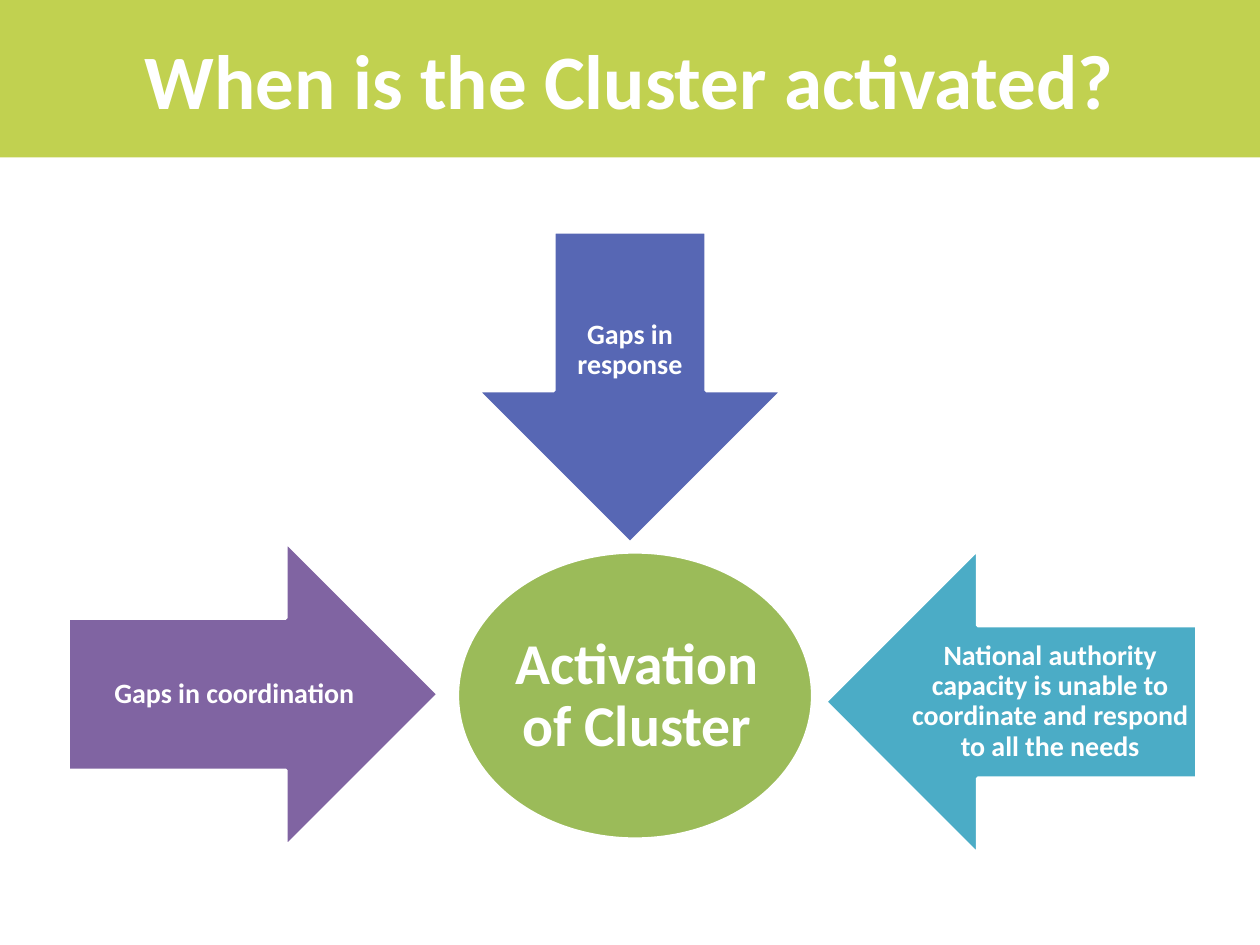
from pptx import Presentation
from pptx.dml.color import RGBColor
from pptx.enum.shapes import MSO_SHAPE
from pptx.enum.text import MSO_ANCHOR, PP_ALIGN
from pptx.util import Inches, Pt

ELLIPSE, RIGHT_ARROW = MSO_SHAPE.OVAL, MSO_SHAPE.RIGHT_ARROW
DOWN_ARROW, LEFT_ARROW = MSO_SHAPE.DOWN_ARROW, MSO_SHAPE.LEFT_ARROW
CENTER, RIGHT = PP_ALIGN.CENTER, PP_ALIGN.RIGHT
MIDDLE = MSO_ANCHOR.MIDDLE

WHITE = RGBColor(0xFF, 0xFF, 0xFF)
LIME = RGBColor(0xC1, 0xD1, 0x50)
GREEN = RGBColor(0x9B, 0xBB, 0x59)
PURPLE = RGBColor(0x80, 0x64, 0xA2)
BLUE = RGBColor(0x57, 0x67, 0xB4)
TEAL = RGBColor(0x4B, 0xAC, 0xC6)

# Grid of 100 columns by 75 rows
COLUMNS, ROWS = 100, 75
SLIDE_WIDTH, SLIDE_HEIGHT = Inches(10), Inches(7.5)
COLUMN, ROW = SLIDE_WIDTH / COLUMNS, SLIDE_HEIGHT / ROWS
TITLE_BOX = (0, 0, COLUMNS, 12.5)

# Shape, box on the grid, fill, label, label box as shares of the shape,
# then label size, alignment, side inset and right inset in inches
PARTS = [
    (ELLIPSE, (36.3, 43.8, 28.2, 22.8), GREEN, "Activation of Cluster",
     (0.15, 0.15, 0.71, 0.71), 33, CENTER, 0.02, 0.02),
    (RIGHT_ARROW, (5.4, 43, 29.4, 24.2), PURPLE, "Gaps in coordination",
     (0, 0.25, 0.8, 0.5), 16, RIGHT, 0.03, 0.08),
    (DOWN_ARROW, (37.9, 18.4, 24.2, 24.7), BLUE, "Gaps in response",
     (0.25, 0, 0.5, 0.76), 16, CENTER, 0.03, 0.03),
    (LEFT_ARROW, (65.5, 43.6, 29.5, 24.2), TEAL,
     "National authority capacity is unable to coordinate "
     "and respond to all the needs",
     (0.21, 0.25, 0.79, 0.5), 16, CENTER, 0.03, 0.03),
]


def to_lengths(box):
    """Turn a grid box into slide lengths."""
    left, top, width, height = box
    return (round(left * COLUMN), round(top * ROW),
            round(width * COLUMN), round(height * ROW))


def inner_box(box, shares):
    """Return the part of a box given by shares of its size."""
    left, top, width, height = box
    x, y, w, h = shares
    return left + x * width, top + y * height, w * width, h * height


def set_attributes(target, values):
    for name, value in values.items():
        setattr(target, name, value)


def write_text(text_frame, text, size, alignment, spacing):
    set_attributes(text_frame, {"word_wrap": True, "vertical_anchor": MIDDLE})
    paragraph = text_frame.paragraphs[0]
    set_attributes(paragraph, {"alignment": alignment, "line_spacing": spacing})
    run = paragraph.add_run()
    run.text = text
    set_attributes(run.font, {"name": "Calibri", "size": Pt(size), "bold": True})
    run.font.color.rgb = WHITE


def add_title(slide, box, text):
    title = slide.shapes.title
    title.left, title.top, title.width, title.height = to_lengths(box)
    title.fill.solid()
    title.fill.fore_color.rgb = LIME
    write_text(title.text_frame, text, 44, CENTER, 1.0)


def add_labelled_shape(slide, kind, box, color, text, shares, size,
                       alignment, inset, right_inset):
    shape = slide.shapes.add_shape(kind, *to_lengths(box))
    shape.shadow.inherit = False
    shape.fill.solid()
    shape.fill.fore_color.rgb = color
    shape.line.color.rgb = WHITE
    shape.line.width = Pt(2)

    label = slide.shapes.add_textbox(*to_lengths(inner_box(box, shares)))
    set_attributes(label.text_frame, {
        "margin_left": Inches(inset), "margin_right": Inches(right_inset),
        "margin_top": Inches(inset), "margin_bottom": Inches(inset)})
    write_text(label.text_frame, text, size, alignment, 0.9)


def main():
    presentation = Presentation()
    presentation.slide_width = SLIDE_WIDTH
    presentation.slide_height = SLIDE_HEIGHT
    title_only = presentation.slide_layouts[5]
    slide = presentation.slides.add_slide(title_only)

    # Title band
    add_title(slide, TITLE_BOX, "When is the Cluster activated?")

    # Central ellipse and the three arrows that point at it
    for part in PARTS:
        add_labelled_shape(slide, *part)

    presentation.save("out.pptx")


if __name__ == "__main__":
    main()
